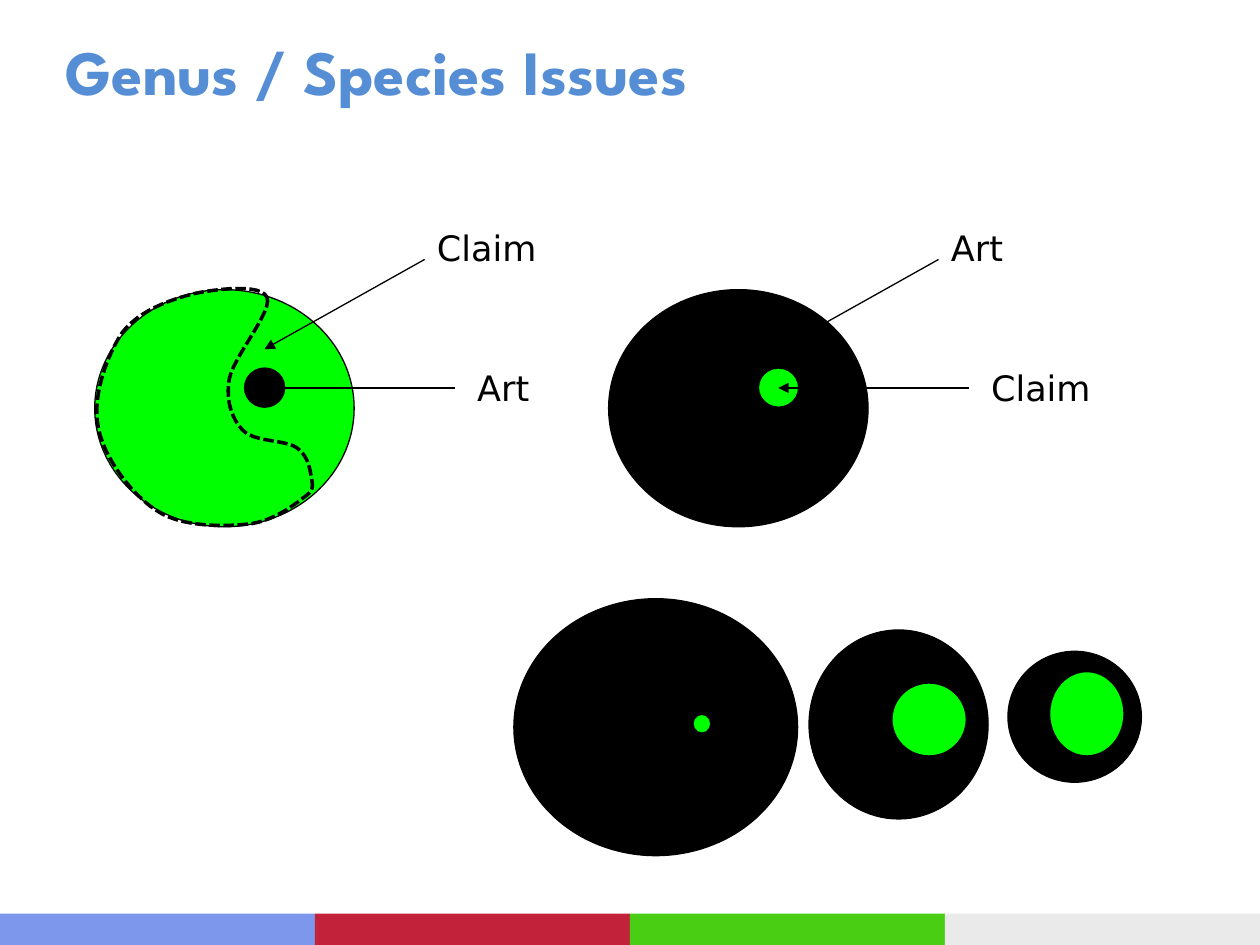
from dataclasses import dataclass

from lxml import etree
from pptx import Presentation
from pptx import util as u
from pptx.dml.color import RGBColor
from pptx.enum import dml, shapes, text
from pptx.oxml.ns import qn


@dataclass(frozen=True)
class Theme:
    title_font: str = "League Spartan"
    label_font: str = "DejaVu Sans"
    title_size: int = 36
    label_size: int = 20
    thin: float = 0.75
    thick: float = 2
    title: str = "558ED5"
    art: str = "000000"
    claim: str = "00FF00"
    ink: str = "000000"
    footer: tuple = ("7C97EC", "C3233A", "49CE14", "EAEAEA")


class SlideBuilder:
    def __init__(self, page, theme):
        self.page = page
        self.theme = theme
        self.target = page.shapes

    def start_group(self):
        """Send the following elements to a new group."""
        self.target = self.page.shapes.add_group_shape().shapes

    def end_group(self):
        self.target = self.page.shapes

    def outline(self, shape, width):
        shape.line.color.rgb = RGBColor.from_string(self.theme.ink)
        shape.line.width = u.Pt(width)

    def filled(self, kind, bounds, color):
        shape = self.target.add_shape(kind, *map(u.Cm, bounds))
        shape.shadow.inherit = False
        shape.fill.solid()
        shape.fill.fore_color.rgb = RGBColor.from_string(color)
        return shape

    def ellipse(self, bounds, color):
        shape = self.filled(shapes.MSO_SHAPE.OVAL, bounds, color)
        self.outline(shape, self.theme.thin)

    def band(self, bounds, color):
        shape = self.filled(shapes.MSO_SHAPE.RECTANGLE, bounds, color)
        shape.line.fill.background()

    def words(self, bounds, wording, font, size, color, bold=False):
        box = self.target.add_textbox(*map(u.Cm, bounds))
        frame = box.text_frame
        frame.word_wrap = True
        frame.vertical_anchor = text.MSO_ANCHOR.MIDDLE
        span = frame.paragraphs[0].add_run()
        span.text = wording
        span.font.name = font
        span.font.size = u.Pt(size)
        span.font.bold = bold
        span.font.color.rgb = RGBColor.from_string(color)

    def title(self, bounds, wording):
        theme = self.theme
        self.words(bounds, wording, theme.title_font, theme.title_size, theme.title, True)

    def label(self, bounds, wording):
        theme = self.theme
        self.words(bounds, wording, theme.label_font, theme.label_size, theme.ink)

    def arrow(self, *ends):
        line = self.target.add_connector(shapes.MSO_CONNECTOR.STRAIGHT, *map(u.Cm, ends))
        self.outline(line, self.theme.thin)
        etree.SubElement(line.line._get_or_add_ln(), qn("a:tailEnd"), type="triangle")
        etree.SubElement(line._element.spPr, qn("a:effectLst"))

    def dashed_curve(self, start, curves, steps=12):
        """Draw a closed outline through cubic Bézier curves."""
        points = []
        first = start
        for x1, y1, x2, y2, x3, y3 in curves:
            corners = (first, (x1, y1), (x2, y2), (x3, y3))
            for step in range(1, steps + 1):
                t = step / steps
                weights = ((1 - t) ** 3, 3 * t * (1 - t) ** 2, 3 * t * t * (1 - t), t ** 3)
                points.append(tuple(
                    u.Cm(sum(w * corner[axis] for w, corner in zip(weights, corners)))
                    for axis in (0, 1)))
            first = (x3, y3)
        builder = self.target.build_freeform(*map(u.Cm, start))
        builder.add_line_segments(points, close=True)
        shape = builder.convert_to_shape()
        shape.shadow.inherit = False
        shape.fill.background()
        self.outline(shape, self.theme.thick)
        shape.line.dash_style = dml.MSO_LINE.SQUARE_DOT

    def labelled_pair(self, left, outer, inner, upper, lower, lower_width):
        """Draw an inner set within an outer one, each with its label."""
        self.start_group()
        self.ellipse((left, 5.84, 5.23, 4.78), outer)
        self.ellipse((left + 3.02, 7.42, 0.81, 0.79), inner)
        self.arrow(left + 6.65, 5.23, left + 3.42, 7.04)
        self.label((left + 6.65, 4.45, 2.62, 1.09), upper)
        self.arrow(left + 7.26, 7.82, left + 3.42, 7.82)
        self.label((left + 7.46, 7.26, lower_width, 1.09), lower)
        self.end_group()


NESTED_SETS = (
    ((10.36, 12.07, 5.72, 5.18), (13.97, 14.4, 0.36, 0.38)),
    ((16.31, 12.7, 3.61, 3.81), (17.98, 13.77, 1.5, 1.47)),
    ((20.32, 13.13, 2.69, 2.64), (21.16, 13.54, 1.5, 1.7)),
)

REMAINDER_START = (5.38, 5.99)
REMAINDER_CURVES = (
    (5.51, 6.27, 4.7, 7.19, 4.62, 7.65),
    (4.55, 8.08, 4.67, 8.43, 4.88, 8.66),
    (5.11, 8.92, 5.74, 8.86, 5.97, 9.02),
    (6.2, 9.17, 6.25, 9.45, 6.27, 9.6),
    (6.3, 9.78, 6.35, 9.88, 6.12, 10.03),
    (5.92, 10.19, 5.46, 10.54, 4.95, 10.57),
    (4.47, 10.62, 3.63, 10.62, 3.15, 10.29),
    (2.64, 9.96, 2.08, 9.2, 1.98, 8.61),
    (1.85, 8, 2.16, 7.16, 2.46, 6.71),
    (2.79, 6.27, 3.4, 6.05, 3.91, 5.92),
    (4.39, 5.82, 5.26, 5.72, 5.38, 5.99),
)


def main():
    deck = Presentation()
    deck.slide_width, deck.slide_height = u.Cm(25.4), u.Cm(19.05)
    theme = Theme()
    slide = SlideBuilder(deck.slides.add_slide(deck.slide_layouts[6]), theme)

    slide.start_group()
    band_width = 25.4 / len(theme.footer)
    for index, color in enumerate(theme.footer):
        slide.band((index * band_width, 18.42, band_width, 0.63), color)
    slide.end_group()

    slide.title((1.07, 0.43, 22.86, 1.98), "Genus / Species Issues")
    slide.labelled_pair(1.91, theme.claim, theme.art, "Claim", "Art", 2.01)
    slide.labelled_pair(12.27, theme.art, theme.claim, "Art", "Claim", 3.02)

    for art, claim in NESTED_SETS:
        slide.start_group()
        slide.ellipse(art, theme.art)
        slide.ellipse(claim, theme.claim)
        slide.end_group()

    slide.dashed_curve(REMAINDER_START, REMAINDER_CURVES)
    deck.save("out.pptx")


if __name__ == "__main__":
    main()
